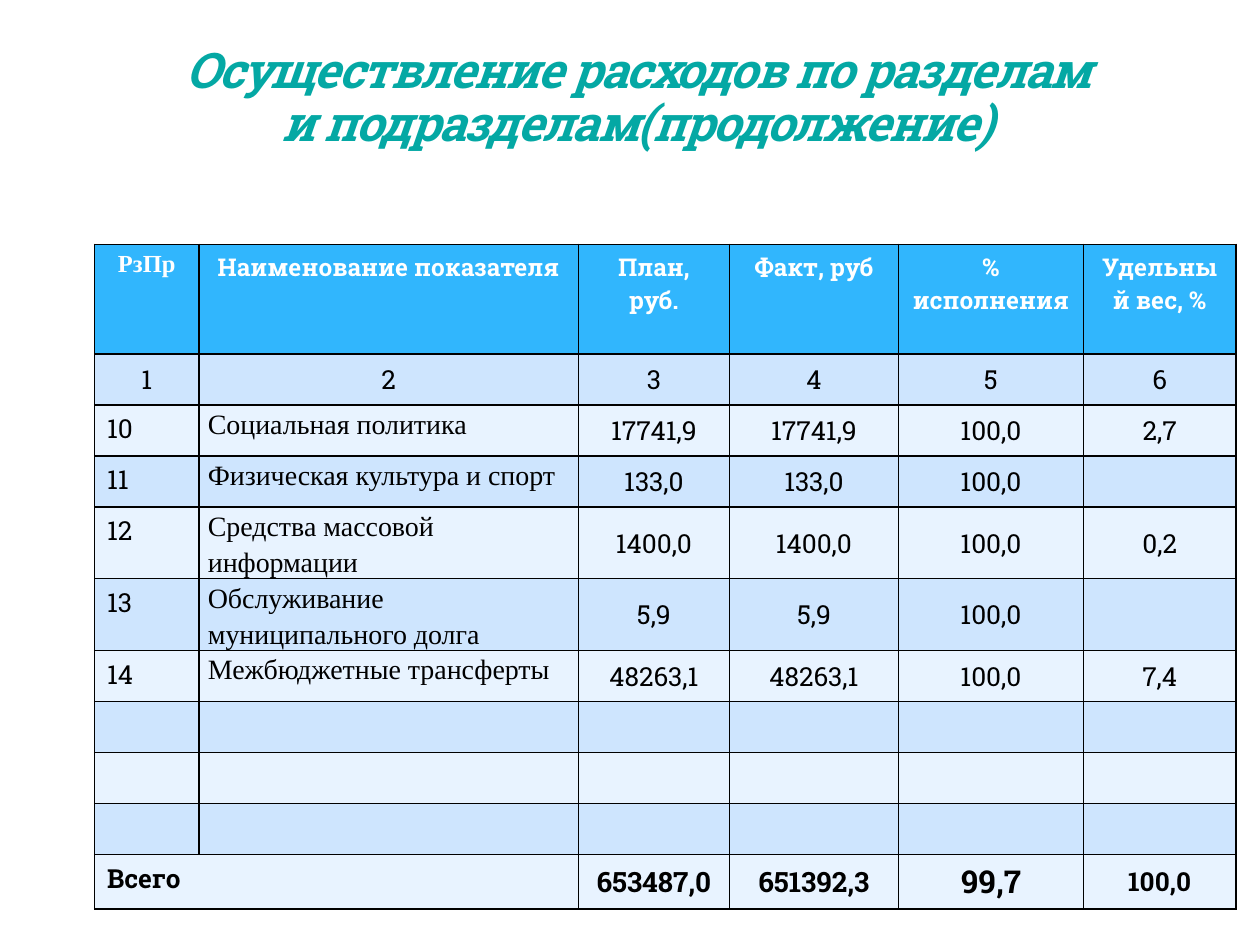
from dataclasses import dataclass

from lxml.etree import SubElement
from pptx import Presentation
from pptx.dml.color import RGBColor
from pptx.enum.text import MSO_ANCHOR, PP_ALIGN
from pptx.oxml import parse_xml
from pptx.oxml.ns import nsdecls, qn
from pptx.shapes.autoshape import Shape
from pptx.table import _Cell
from pptx.util import Inches, Pt


@dataclass(frozen=True)
class Theme:
    slab: str = "Roboto Slab"
    serif: str = "Times New Roman"
    title: str = "04A8A4"
    title_edge: str = "AFCCDE"
    header: str = "31B6FD"
    bands: tuple[str, str] = ("CEE5FE", "E8F3FF")
    white: str = "FFFFFF"
    black: str = "000000"
    title_pt: int = 28
    header_pt: int = 14
    body_pt: int = 15
    name_pt: int = 16
    total_pt: int = 16
    percent_pt: int = 18


THEME = Theme()


@dataclass(frozen=True)
class Style:
    size: int
    font: str = THEME.slab
    color: str = THEME.black
    bold: bool = False
    centered: bool = True
    middle: bool = True
    tight: bool = False


HEADER = Style(THEME.header_pt, color=THEME.white, bold=True, middle=False)
HEADER_CODE = Style(THEME.header_pt, THEME.serif, THEME.white, True, middle=False)
NUMBER = Style(THEME.body_pt)
CODE = Style(THEME.body_pt, centered=False, middle=False)
NAME = Style(THEME.name_pt, THEME.serif, centered=False, middle=False, tight=True)
TOTAL_LABEL = Style(THEME.body_pt, bold=True, centered=False, middle=False)
TOTAL = Style(THEME.total_pt, bold=True)
TOTAL_PERCENT = Style(THEME.percent_pt, bold=True)
TOTAL_SHARE = Style(THEME.body_pt, bold=True)

COLUMNS = (0.83, 3.01, 1.2, 1.34, 1.47, 1.21)
HEADER_HEIGHT = 0.87
ROW_HEIGHT = 0.81 / 2
BODY_STYLES = (CODE, NAME) + (NUMBER,) * 4
EMPTY_ROW = ("",) * len(COLUMNS)

ROWS = [
    (("РзПр", "Наименование показателя", "План, руб.", "Факт, руб",
      "% исполнения", "Удельный вес, %"), (HEADER_CODE,) + (HEADER,) * 5),
    (("1", "2", "3", "4", "5", "6"), (NUMBER,) * 6),
    (("10", "Социальная политика", "17741,9", "17741,9", "100,0", "2,7"), BODY_STYLES),
    (("11", "Физическая культура и спорт", "133,0", "133,0", "100,0", ""), BODY_STYLES),
    (("12", "Средства массовой информации", "1400,0", "1400,0", "100,0", "0,2"), BODY_STYLES),
    (("13", "Обслуживание муниципального долга", "5,9", "5,9", "100,0", ""), BODY_STYLES),
    (("14", "Межбюджетные трансферты", "48263,1", "48263,1", "100,0", "7,4"), BODY_STYLES),
    *[(EMPTY_ROW, BODY_STYLES)] * 3,
    (("Всего", "", "653487,0", "651392,3", "99,7", "100,0"),
     (TOTAL_LABEL, TOTAL_LABEL, TOTAL, TOTAL, TOTAL_PERCENT, TOTAL_SHARE)),
]


def rgb(color: str) -> RGBColor:
    return RGBColor.from_string(color)


def add_borders(cell: _Cell) -> None:
    tc_pr = cell._tc.get_or_add_tcPr()
    for i, side in enumerate(("lnL", "lnR", "lnT", "lnB")):
        tc_pr.insert(i, parse_xml(
            f'<a:{side} {nsdecls("a")} w="{Pt(1)}"><a:solidFill>'
            f'<a:srgbClr val="{THEME.black}"/></a:solidFill></a:{side}>'))


def fill_cell(cell: _Cell, text: str, style: Style, fill: str) -> None:
    cell.fill.solid()
    cell.fill.fore_color.rgb = rgb(fill)
    add_borders(cell)
    if not text:
        return
    if style.middle:
        cell.vertical_anchor = MSO_ANCHOR.MIDDLE
    p = cell.text_frame.paragraphs[0]
    p.alignment = PP_ALIGN.CENTER if style.centered else PP_ALIGN.LEFT
    if style.tight:
        cell.margin_left = cell.margin_right = Inches(0.07)
        cell.margin_top = cell.margin_bottom = 0
        p.line_spacing = 1.15
    r = p.add_run()
    r.text = text
    r.font.size = Pt(style.size)
    r.font.name = style.font
    r.font.bold = style.bold
    r.font.color.rgb = rgb(style.color)


def format_title(sp: Shape, text: str) -> None:
    sp.left, sp.top, sp.width, sp.height = map(Inches, (1.22, 0.76, 7.68, 0.5))
    tf = sp.text_frame
    tf.word_wrap = True
    tf.vertical_anchor = MSO_ANCHOR.BOTTOM
    p = tf.paragraphs[0]
    p.alignment = PP_ALIGN.CENTER
    p.line_spacing = 0.9
    r = p.add_run()
    r.text = text
    r.font.size = Pt(THEME.title_pt)
    r.font.name = THEME.slab
    r.font.bold = r.font.italic = True
    r.font.color.rgb = rgb(THEME.title)
    r_pr = r.font._element
    r_pr.set("spc", "-100")
    edge = parse_xml(
        f'<a:ln {nsdecls("a")} w="{Pt(0.25)}"><a:solidFill>'
        f'<a:srgbClr val="{THEME.title_edge}"/></a:solidFill></a:ln>')
    SubElement(edge[0][0], qn("a:alpha"), val="25000")
    r_pr.insert(0, edge)


def main() -> None:
    prs = Presentation()
    prs.slide_width, prs.slide_height = Inches(10), Inches(7.5)
    slide = prs.slides.add_slide(prs.slide_layouts[5])
    title = slide.shapes.title
    format_title(title, "Осуществление расходов по разделам и подразделам(продолжение)")

    heights = [HEADER_HEIGHT] + [ROW_HEIGHT] * (len(ROWS) - 1)
    frame = slide.shapes.add_table(
        len(ROWS), len(COLUMNS), Inches(0.75), Inches(1.94),
        Inches(sum(COLUMNS)), Inches(sum(heights)))
    frame.element.addnext(title.element)
    table = frame.table
    for column, width in zip(table.columns, COLUMNS):
        column.width = Inches(width)
    for row, height in zip(table.rows, heights):
        row.height = Inches(height)
    for i, (texts, styles) in enumerate(ROWS):
        fill = THEME.bands[(i - 1) % 2] if i else THEME.header
        for cell, text, style in zip(table.rows[i].cells, texts, styles):
            fill_cell(cell, text, style, fill)
    last = len(ROWS) - 1
    table.cell(last, 0).merge(table.cell(last, 1))
    prs.save("out.pptx")


if __name__ == "__main__":
    main()
